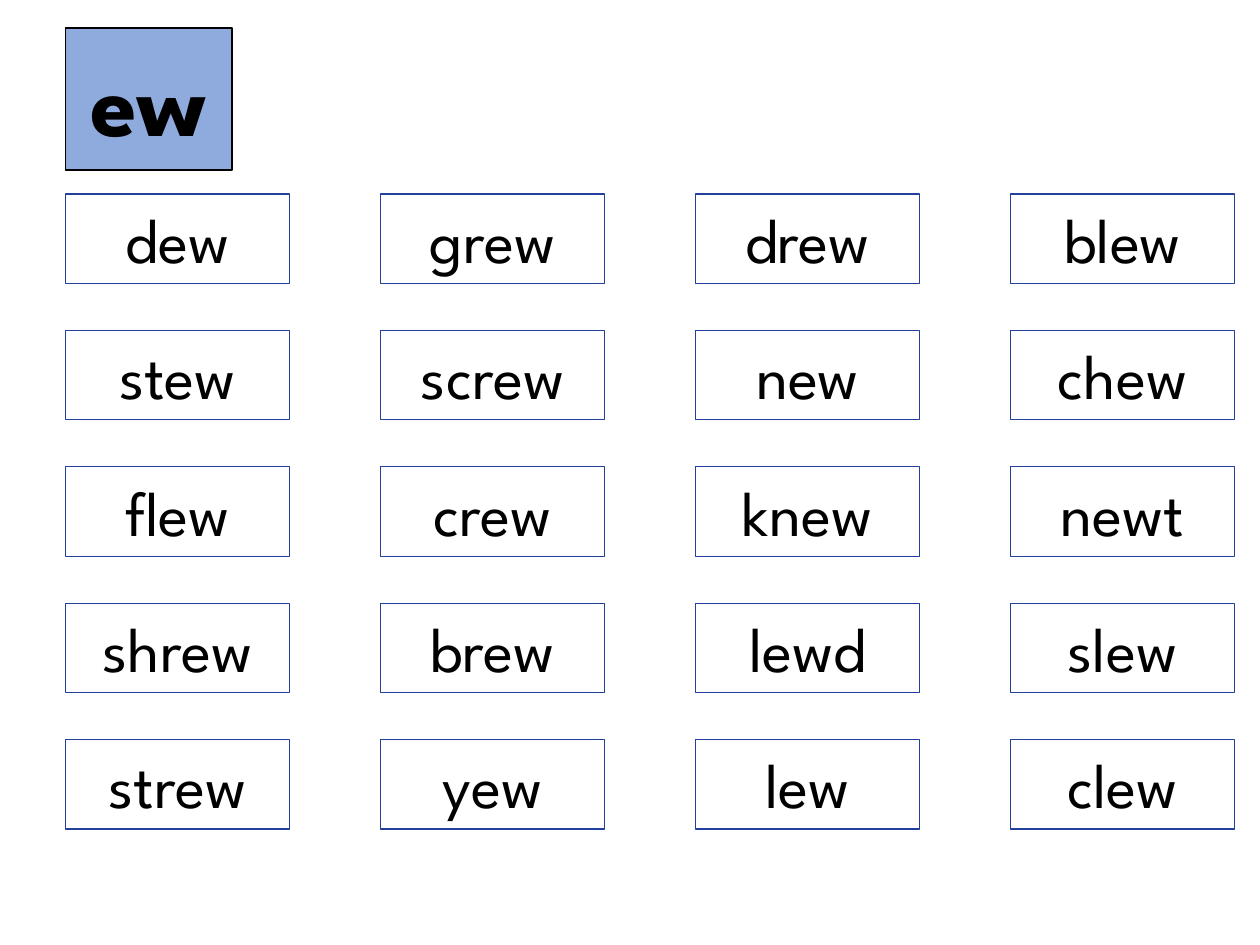
from pptx import Presentation
from pptx.dml.color import RGBColor
from pptx.enum.shapes import MSO_SHAPE as Shape
from pptx.enum.text import MSO_ANCHOR as Anchor, MSO_AUTO_SIZE as AutoSize, PP_ALIGN as Align
from pptx.util import Inches, Pt

BLACK = RGBColor(0x00, 0x00, 0x00)
NAVY = RGBColor(0x22, 0x40, 0x9C)
SKY = RGBColor(0x8F, 0xAA, 0xDC)
FONT = "League Spartan"

WORD_COLUMNS = [
    ["dew", "stew", "flew", "shrew", "strew"],
    ["grew", "screw", "crew", "brew", "yew"],
    ["drew", "new", "knew", "lewd", "lew"],
    ["blew", "chew", "newt", "slew", "clew"],
]


def add_card(slide, box, text, size, line, weight, fill=None, bold=None):
    """Outlined rectangle with one centred word; box is in inches."""
    sp = slide.shapes.add_shape(Shape.RECTANGLE, *map(Inches, box))
    sp.shadow.inherit = False
    if fill is None:
        sp.fill.background()
    else:
        sp.fill.solid()
        sp.fill.fore_color.rgb = fill
    sp.line.color.rgb = line
    sp.line.width = Pt(weight)
    tf = sp.text_frame
    tf.word_wrap = True
    p = tf.paragraphs[0]
    p.alignment = Align.CENTER
    r = p.add_run()
    r.text = text
    r.font.name = FONT
    r.font.size = Pt(size)
    r.font.bold = bold
    r.font.color.rgb = BLACK
    return tf


def add_sound_tile(slide, box):
    tf = add_card(slide, box, "ew", 54, BLACK, 1, fill=SKY, bold=True)
    tf.vertical_anchor = Anchor.MIDDLE


def add_word_grid(slide, box, columns, card_w=1.78, card_h=0.71):
    """Spread the word cards evenly over the box."""
    left, top, width, height = box
    step_x = (width - card_w) / (len(columns) - 1)
    step_y = (height - card_h) / (len(columns[0]) - 1)
    for col, words in enumerate(columns):
        for row, word in enumerate(words):
            card = (left + col * step_x, top + row * step_y, card_w, card_h)
            tf = add_card(slide, card, word, 36, NAVY, 0.75)
            tf.vertical_anchor = Anchor.TOP
            tf.auto_size = AutoSize.SHAPE_TO_FIT_TEXT


def main():
    prs = Presentation()
    prs.slide_width, prs.slide_height = Inches(10), Inches(7.5)
    slide = prs.slides.add_slide(prs.slide_layouts[6])
    # Word cards
    add_word_grid(slide, (0.52, 1.54, 9.28, 5.04), WORD_COLUMNS)
    # Spelling pattern
    add_sound_tile(slide, (0.52, 0.22, 1.32, 1.13))
    prs.save("out.pptx")


if __name__ == "__main__":
    main()
